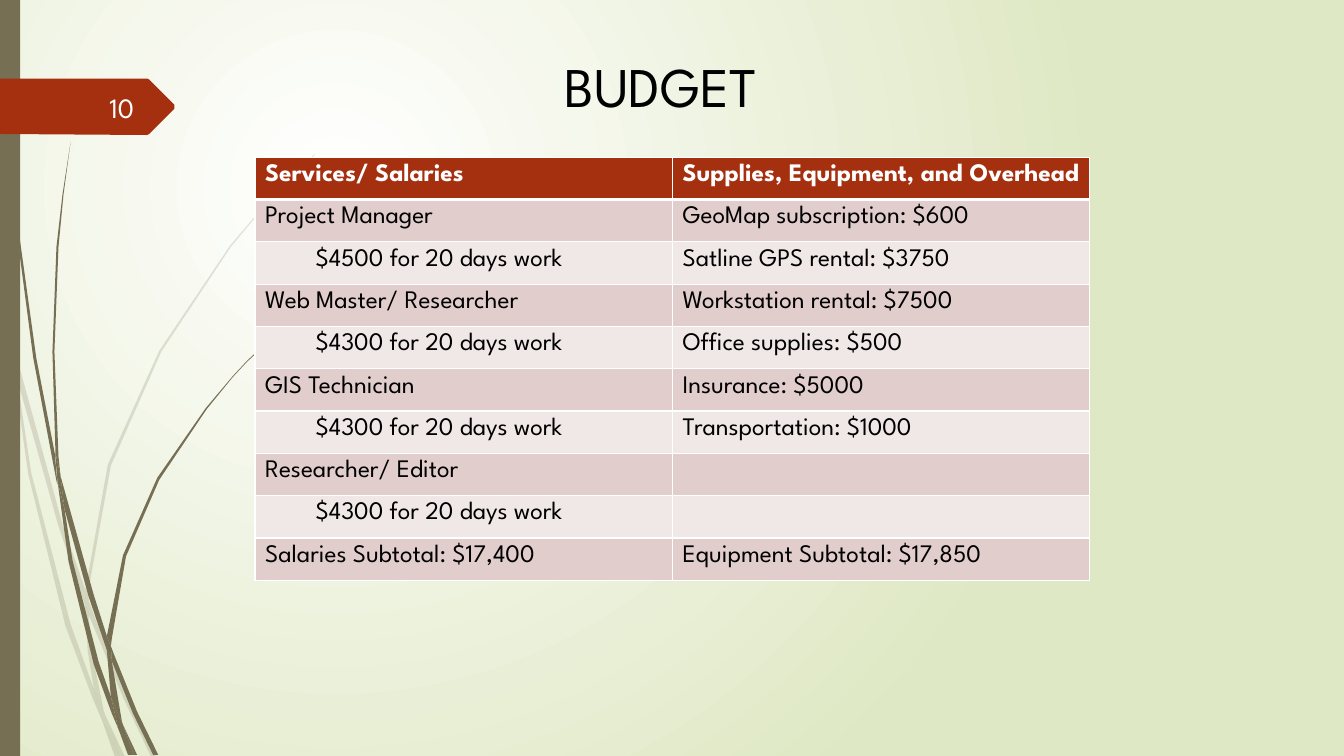
from dataclasses import dataclass

from lxml.etree import SubElement
from pptx import Presentation
from pptx.dml.color import RGBColor as RGB
from pptx.enum.text import MSO_ANCHOR as Anchor, MSO_AUTO_SIZE as Auto, PP_ALIGN as Align
from pptx.enum.shapes import MSO_SHAPE as Kind
from pptx.oxml.ns import qn
from pptx.util import Pt

PX = 9144  # 100 px to the inch
FONT = "League Spartan"
HUES = {
    "white": "FFFFFF", "pale": "DFE8C4", "olive": "766F54", "rust": "A53010",
    "rose": "E1CDCC", "blush": "F0E8E7", "black": "000000", "page": "FEFFFF",
}
Points = list[tuple[int, int]]


@dataclass
class Tuft:
    alpha: int
    blades: list[Points]


@dataclass
class Label:
    text: str
    box: tuple[int, int, int, int]
    size: int
    hue: str
    align: Align
    anchor: Anchor
    wrap: bool
    fit: Auto


# Grass on the left edge, rear tuft first
REAR = Tuft(20, [
    [(11, 350), (9, 322), (0, 282), (0, 299), (10, 344)],
    [(58, 522), (84, 599), (85, 586), (62, 520), (14, 345), (17, 376)],
    [(92, 607), (88, 596), (88, 610), (123, 694), (150, 751), (155, 751), (127, 692)],
    [(119, 751), (124, 751), (105, 711)],
    [(93, 683), (70, 619), (31, 469), (17, 376), (11, 350), (28, 470), (65, 621),
     (92, 693), (101, 714), (99, 707)],
    [(84, 599), (87, 646), (93, 683), (96, 692), (105, 711), (103, 706), (91, 646),
     (88, 610), (88, 608)],
    [(88, 584), (110, 462), (160, 349), (229, 245), (268, 198), (290, 175), (312, 154),
     (312, 153), (289, 175), (268, 197), (228, 244), (158, 348), (107, 461), (85, 584),
     (85, 586), (88, 596)],
    [(101, 714), (114, 751), (119, 751)],
    [(88, 608), (88, 610), (88, 596), (85, 586), (84, 599)],
    [(96, 692), (93, 683), (99, 707), (101, 714), (119, 751), (105, 711)],
])
FRONT = Tuft(100, [
    [(7, 110), (17, 233), (33, 355), (56, 477), (57, 481), (55, 457), (55, 453), (36, 355),
     (19, 232), (8, 109), (5, 48), (4, 0), (3, 0), (4, 48)],
    [(88, 592), (106, 645), (106, 633), (106, 631), (93, 590), (60, 472), (64, 505)],
    [(113, 649), (110, 641), (111, 656), (132, 708), (152, 749), (157, 749), (136, 706)],
    [(110, 691), (98, 657), (72, 556), (64, 505), (57, 477), (68, 557), (93, 659),
     (111, 708), (117, 722), (116, 717)],
    [(60, 472), (58, 453), (54, 349), (58, 245), (63, 193), (70, 141), (62, 193),
     (56, 245), (52, 349), (55, 449)],
    [(133, 749), (136, 749), (122, 719)],
    [(57, 477), (64, 505), (60, 472), (55, 449), (55, 453)],
    [(111, 633), (125, 552), (158, 476), (205, 406), (231, 374), (245, 359), (261, 344),
     (260, 344), (245, 358), (231, 373), (204, 405), (156, 474), (122, 551), (106, 631),
     (110, 641)],
    [(117, 722), (127, 749), (131, 749)],
    [(106, 645), (110, 691), (116, 706), (122, 719), (121, 716), (111, 656), (109, 651)],
    [(106, 645), (109, 651), (111, 656), (110, 641), (106, 631), (106, 633)],
    [(116, 706), (110, 691), (116, 717), (117, 722), (130, 749), (133, 749), (122, 719)],
])
ARROW = [(0, 78), (146, 78), (148, 79), (173, 104), (173, 108), (148, 133), (146, 134), (0, 133)]

ROWS = [
    ("Services/ Salaries", "Supplies, Equipment, and Overhead"),
    ("Project Manager", "GeoMap subscription: $600"),
    ("$4500 for 20 days work", "Satline GPS rental: $3750"),
    ("Web Master/ Researcher", "Workstation rental: $7500"),
    ("$4300 for 20 days work", "Office supplies: $500"),
    ("GIS Technician", "Insurance: $5000"),
    ("$4300 for 20 days work", "Transportation: $1000"),
    ("Researcher/ Editor", ""),
    ("$4300 for 20 days work", ""),
    ("Salaries Subtotal: $17,400", "Equipment Subtotal: $17,850"),
]
LABELS = [
    Label("BUDGET", (550, 46, 234, 77), 40, "black", Align.LEFT, Anchor.TOP, False,
          Auto.SHAPE_TO_FIT_TEXT),
    Label("10", (58, 86, 85, 40), 20, "page", Align.RIGHT, Anchor.MIDDLE, True, Auto.NONE),
]


def tint(name: str) -> RGB:
    return RGB.from_string(HUES[name])


def paint(shape, hue: str, alpha: int = 100) -> None:
    shape.shadow.inherit = False
    shape.fill.solid()
    shape.fill.fore_color.rgb = tint(hue)
    shape.line.fill.background()
    if alpha < 100:
        color = next(shape._element.spPr.iter(qn("a:srgbClr")))
        SubElement(color, qn("a:alpha"), val=str(alpha * 1000))


def trace(shapes, points: Points, hue: str, alpha: int = 100) -> None:
    pen = shapes.build_freeform(*points[0], scale=PX)
    pen.add_line_segments(points[1:], close=True)
    paint(pen.convert_to_shape(), hue, alpha)


def style(para, size: int, hue: str, bold: bool = False) -> None:
    for run in para.runs:
        run.font.name, run.font.size, run.font.bold = FONT, Pt(size), bold
        run.font.color.rgb = tint(hue)


def edge(cell, head: bool) -> None:
    props = cell._tc.get_or_add_tcPr()
    for spot, side in enumerate(("lnL", "lnR", "lnT", "lnB")):
        width = 3 if head and side == "lnB" else 1
        line = SubElement(props, qn(f"a:{side}"), w=str(Pt(width)))
        fill = SubElement(line, qn("a:solidFill"))
        SubElement(fill, qn("a:srgbClr"), val=HUES["white"])
        props.insert(spot, line)


def back(slide) -> None:
    fill = slide.background.fill
    fill.gradient()
    for stop, place, hue in zip(fill.gradient_stops, (0, 1), ("white", "pale")):
        stop.position = place
        stop.color.rgb = tint(hue)
    grad = next(slide._element.iter(qn("a:gradFill")))
    grad.remove(grad.find(qn("a:lin")))
    ring = SubElement(grad, qn("a:path"), path="circle")
    SubElement(ring, qn("a:fillToRect"), l="50000", t="50000", r="100000", b="100000")


def budget(slide) -> None:
    high = 42
    box = (253, 156, 828, high * len(ROWS))
    table = slide.shapes.add_table(len(ROWS), 2, *(n * PX for n in box)).table
    for r, row in enumerate(ROWS):
        table.rows[r].height = high * PX
        head = r == 0
        hue = "rust" if head else "rose" if r % 2 else "blush"
        for c, text in enumerate(row):
            cell = table.cell(r, c)
            cell.fill.solid()
            cell.fill.fore_color.rgb = tint(hue)
            edge(cell, head)
            para = cell.text_frame.paragraphs[0]
            para.text = text
            para.line_spacing = 1.07
            if text.endswith("days work"):
                para._p.get_or_add_pPr().set("marL", str(50 * PX))
            style(para, 18, "white" if head else "black", head)


def write(slide, label: Label) -> None:
    frame = slide.shapes.add_textbox(*(n * PX for n in label.box)).text_frame
    frame.text = label.text
    frame.word_wrap, frame.auto_size = label.wrap, label.fit
    frame.vertical_anchor = label.anchor
    para = frame.paragraphs[0]
    para.alignment = label.align
    style(para, label.size, label.hue)


def main() -> None:
    deck = Presentation()
    deck.slide_width, deck.slide_height = 1333 * PX, 750 * PX
    slide = deck.slides.add_slide(deck.slide_layouts[6])
    back(slide)
    for tuft in (REAR, FRONT):
        group = slide.shapes.add_group_shape()
        for blade in tuft.blades:
            trace(group.shapes, blade, "olive", tuft.alpha)
    # Side bar and page marker
    bar = slide.shapes.add_shape(Kind.RECTANGLE, 0, 0, 20 * PX, 750 * PX)
    paint(bar, "olive")
    trace(slide.shapes, ARROW, "rust")
    budget(slide)
    for label in LABELS:
        write(slide, label)
    deck.save("out.pptx")


if __name__ == "__main__":
    main()
